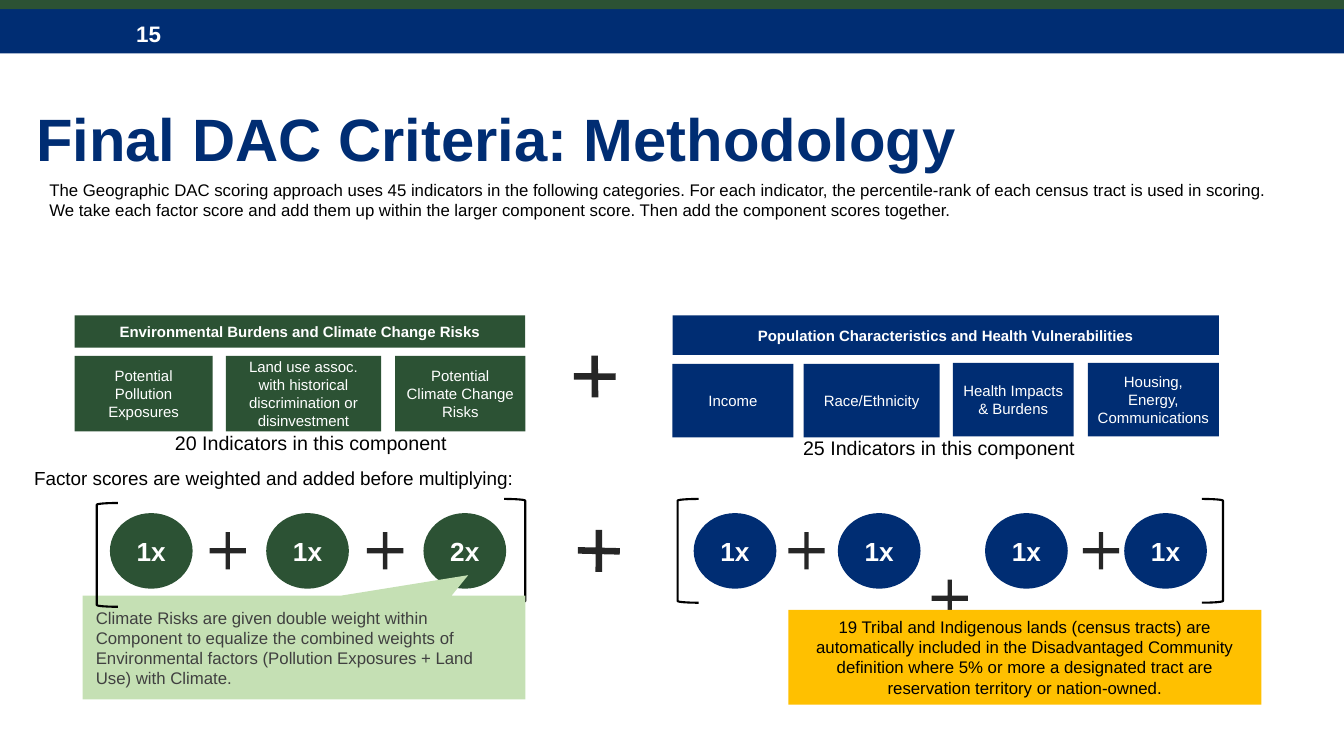
"""Build the Final DAC Criteria methodology slide on a grid of 13.33 columns by 7.5 rows."""
from pptx import Presentation
from pptx.dml.color import RGBColor
from pptx.enum.shapes import MSO_SHAPE
from pptx.enum.text import MSO_ANCHOR, PP_ALIGN
from pptx.util import Inches, Pt

RECT, OVAL, PLUS = MSO_SHAPE.RECTANGLE, MSO_SHAPE.OVAL, MSO_SHAPE.CROSS
TIMES, CALLOUT = MSO_SHAPE.MATH_MULTIPLY, MSO_SHAPE.RECTANGULAR_CALLOUT
OPEN, CLOSE = MSO_SHAPE.LEFT_BRACKET, MSO_SHAPE.RIGHT_BRACKET
TOP, MIDDLE = MSO_ANCHOR.TOP, MSO_ANCHOR.MIDDLE
LEFT, CENTER = PP_ALIGN.LEFT, PP_ALIGN.CENTER
COLORS = {"navy": "002D73", "green": "2C5234", "mint": "C5E0B4", "gold": "FFC000",
          "white": "FFFFFF", "black": "000000", "gray": "404040", "dark": "262626"}
WIDE = (0.13, 0.07, 0.13, 0.07)
SNUG = (0.1, 0.05, 0.1, 0.05)
TIGHT = (0.09, 0.05, 0.09, 0.05)
COLS, ROWS = 13.33, 7.5

prs = Presentation()
prs.slide_width, prs.slide_height = Inches(COLS), Inches(ROWS)
s = prs.slides.add_slide(prs.slide_layouts[6])
cell = prs.slide_height / ROWS


def add_shape(kind, x, y, w, h, fill=None, adj=(), rotation=0):
    sp = s.shapes.add_shape(kind, *(round(n * cell) for n in (x, y, w, h)))
    sp.shadow.inherit = False
    sp.rotation = rotation
    for i, value in enumerate(adj):
        sp.adjustments[i] = value
    if fill:
        sp.fill.solid()
        sp.fill.fore_color.rgb = RGBColor.from_string(COLORS[fill])
    else:
        sp.fill.background()
    sp.line.fill.background()
    return sp


def add_text(sp, *lines, size=12, color="white", bold=False, align=CENTER,
             anchor=MIDDLE, insets=SNUG, spacing=1.0, after=0):
    tf = sp.text_frame
    tf.word_wrap = True
    tf.vertical_anchor = anchor
    tf.margin_left, tf.margin_top, tf.margin_right, tf.margin_bottom = map(Inches, insets)
    for i, line in enumerate(lines):
        p = tf.add_paragraph() if i else tf.paragraphs[0]
        p.alignment, p.line_spacing = align, spacing
        p.space_after = Pt(after if i else 0)
        r = p.add_run()
        r.text = line
        r.font.name, r.font.size, r.font.bold = "Arial", Pt(size), bold
        r.font.color.rgb = RGBColor.from_string(COLORS[color])


sp = add_shape(RECT, 0, 0.09, COLS, 0.44, "navy")
add_text(sp, "15", size=16, bold=True, align=LEFT, insets=(1.35, 0.12, 0.4, 0.08))
add_shape(RECT, 0, 0, COLS, 0.09, "green")

labels = [
    ((0.36, 0.74, 12.56, 1.34), ["Final DAC Criteria: Methodology"],
     dict(size=42.7, color="navy", bold=True, align=LEFT, insets=(0, 0, 0, 0), spacing=0.9)),
    ((0.36, 1.71, 12.56, 0.54),
     ["The Geographic DAC scoring approach uses 45 indicators in the following categories. "
      "For each indicator, the percentile-rank of each census tract is used in scoring.",
      "We take each factor score and add them up within the larger component score. "
      "Then add the component scores together."],
     dict(color="black", align=LEFT, anchor=TOP, insets=WIDE, after=8)),
    ((0.24, 4.58, 12.66, 0.33), ["Factor scores are weighted and added before multiplying:"],
     dict(size=13.5, color="black", align=LEFT, anchor=TOP)),
    ((0.6, 4.23, 4.97, 0.34), ["20 Indicators in this component"],
     dict(size=14, color="black", anchor=TOP)),
    ((6.83, 4.28, 4.97, 0.34), ["25 Indicators in this component"],
     dict(size=14, color="black", anchor=TOP)),
]
for box, lines, fmt in labels:
    add_text(s.shapes.add_textbox(*(round(n * cell) for n in box)), *lines, **fmt)

components = [
    ("green", "Environmental Burdens and Climate Change Risks",
     (0.74, 3.13, 4.47, 0.32), 0.75, SNUG,
     [("Potential Pollution Exposures", 0.74, 3.53, 1.37, "1x", 1.09),
      ("Land use assoc. with historical discrimination or disinvestment",
       2.24, 3.53, 1.54, "1x", 2.64),
      ("Potential Climate Change Risks", 3.92, 3.53, 1.29, "2x", 4.2)]),
    ("navy", "Population Characteristics and Health Vulnerabilities",
     (6.67, 3.13, 5.42, 0.39), 0.73, TIGHT,
     [("Income", 6.67, 3.61, 1.2, "1x", 6.88),
      ("Race/Ethnicity", 7.97, 3.61, 1.35, "1x", 8.31),
      ("Health Impacts & Burdens", 9.45, 3.6, 1.2, "1x", 9.77),
      ("Housing, Energy, Communications", 10.79, 3.6, 1.3, "1x", 11.15)]),
]
for fill, heading, box, height, insets, factors in components:
    add_text(add_shape(RECT, *box, fill), heading, size=10.7, bold=True, insets=WIDE)
    for factor, x, y, w, weight, circle_x in factors:
        add_text(add_shape(RECT, x, y, w, height, fill), factor, size=10.7, insets=insets)
        add_text(add_shape(OVAL, circle_x, 5.09, 0.82, 0.75, fill), weight,
                 size=18.7, bold=True, insets=WIDE)

for x, y, angle in [(5.62, 3.45, 314.9), (5.66, 5.18, 315.8)]:
    add_shape(TIMES, x, y, 0.56, 0.57, "dark", [0.116], angle)
for x, y in [(2.08, 5.28), (3.64, 5.28), (7.82, 5.28), (9.24, 5.75), (10.74, 5.28)]:
    add_shape(PLUS, x, y, 0.36, 0.37, "dark", [0.44])

brackets = [(CLOSE, 5, 4.95), (OPEN, 6.72, 4.95), (CLOSE, 11.92, 4.95), (OPEN, 0.96, 4.99)]
for kind, x, y in brackets:
    if (kind, x) == (OPEN, 0.96):
        sp = add_shape(CALLOUT, 0.82, 5.91, 4.39, 1.03, "mint", [0.371, -0.698])
        add_text(sp, "Climate Risks are given double weight within Component to equalize the "
                 "combined weights of Environmental factors (Pollution Exposures + Land Use) "
                 "with Climate.", color="gray", align=LEFT, insets=WIDE)
    sp = add_shape(kind, x, y, 0.21, 1.03)
    sp.line.color.rgb = RGBColor.from_string(COLORS["black"])
    sp.line.width = Pt(1.5)

sp = add_shape(RECT, 7.82, 6.05, 4.69, 0.94, "gold")
add_text(sp, "19 Tribal and Indigenous lands (census tracts) are automatically included in the "
         "Disadvantaged Community definition where 5% or more a designated tract are "
         "reservation territory or nation-owned.", color="black", anchor=TOP, insets=WIDE)

prs.save("out.pptx")
